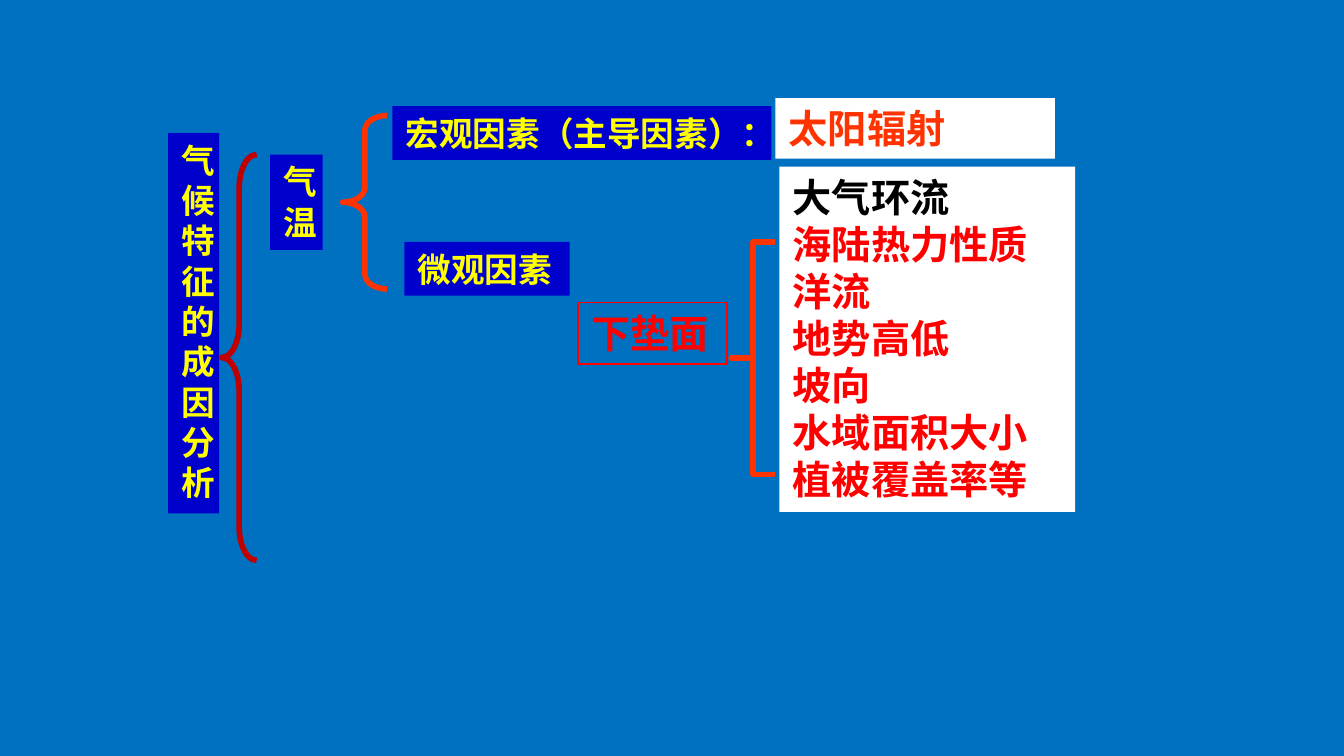
from dataclasses import dataclass
from typing import Optional

from pptx import Presentation
from pptx.dml.color import RGBColor
from pptx.enum.shapes import MSO_SHAPE
from pptx.enum.text import MSO_AUTO_SIZE
from pptx.util import Inches, Pt

LEFT_BRACE = MSO_SHAPE.LEFT_BRACE
FIT_TEXT = MSO_AUTO_SIZE.SHAPE_TO_FIT_TEXT


@dataclass(frozen=True)
class Theme:
    background: str = "0070C0"
    navy: str = "0000CC"
    yellow: str = "FFFF00"
    white: str = "FFFFFF"
    black: str = "000000"
    red: str = "FF0000"
    orange: str = "FF3300"
    dark_red: str = "C00000"
    topic_font: str = "Arial"
    topic_size: float = 18
    factor_font: str = "Times New Roman"
    factor_size: float = 21
    brace_width: float = 3
    frame_width: float = 0.75


THEME = Theme()


@dataclass(frozen=True)
class Area:
    left: float
    top: float
    width: float
    height: float

    def lengths(self) -> tuple:
        return tuple(map(Inches, (self.left, self.top, self.width, self.height)))


@dataclass(frozen=True)
class Line:
    text: str
    color: str


@dataclass(frozen=True)
class Label:
    area: Area
    lines: tuple[Line, ...]
    font: str
    size: float
    fill: Optional[str] = None
    frame: Optional[str] = None


@dataclass(frozen=True)
class Brace:
    area: Area
    curve: float
    color: str


def topic(area: Area, text: str) -> Label:
    return Label(area, (Line(text, THEME.yellow),), THEME.topic_font,
                 THEME.topic_size, fill=THEME.navy)


def factors(area: Area, *lines: Line, fill: Optional[str] = None,
            frame: Optional[str] = None) -> Label:
    return Label(area, lines, THEME.factor_font, THEME.factor_size, fill, frame)


SURFACE_FACTORS = ("海陆热力性质", "洋流", "地势高低", "坡向", "水域面积大小", "植被覆盖率等")

PARTS = (
    topic(Area(1.25, 0.99, 0.38, 2.83), "气候特征的成因分析"),
    Brace(Area(1.65, 1.15, 0.26, 3.02), 0.96, THEME.dark_red),
    topic(Area(2.01, 1.15, 0.39, 0.71), "气温"),
    Brace(Area(2.55, 0.86, 0.33, 1.29), 0.33, THEME.orange),
    topic(Area(2.92, 0.79, 2.82, 0.4), "宏观因素（主导因素）："),
    factors(Area(5.77, 0.73, 2.08, 0.45), Line("太阳辐射", THEME.orange),
            fill=THEME.white),
    topic(Area(3.01, 1.8, 1.23, 0.4), "微观因素"),
    factors(Area(4.3, 2.25, 1.11, 0.46), Line("下垫面", THEME.red),
            frame=THEME.red),
    factors(Area(5.8, 1.24, 2.2, 2.57), Line("大气环流", THEME.black),
            *(Line(name, THEME.red) for name in SURFACE_FACTORS),
            fill=THEME.white),
    Brace(Area(5.44, 1.8, 0.33, 1.73), 0, THEME.orange),
)


def rgb(color: str) -> RGBColor:
    return RGBColor.from_string(color)


def draw_label(page, label: Label) -> None:
    box = page.shapes.add_textbox(*label.area.lengths())
    if label.fill:
        box.fill.solid()
        box.fill.fore_color.rgb = rgb(label.fill)
    if label.frame:
        box.line.color.rgb = rgb(label.frame)
        box.line.width = Pt(THEME.frame_width)
    frame = box.text_frame
    frame.word_wrap = True
    frame.auto_size = FIT_TEXT
    frame.text = "\n".join(line.text for line in label.lines)
    for para, line in zip(frame.paragraphs, label.lines):
        para.font.name = label.font
        para.font.size = Pt(label.size)
        para.font.bold = True
        para.font.color.rgb = rgb(line.color)


def draw_brace(page, brace: Brace) -> None:
    shape = page.shapes.add_shape(LEFT_BRACE, *brace.area.lengths())
    shape.shadow.inherit = False
    shape.adjustments[0] = brace.curve
    shape.adjustments[1] = 0.5
    shape.fill.background()
    shape.line.color.rgb = rgb(brace.color)
    shape.line.width = Pt(THEME.brace_width)


def main() -> None:
    deck = Presentation()
    deck.slide_width = Inches(10)
    deck.slide_height = Inches(10 * 9 / 16)
    page = deck.slides.add_slide(deck.slide_layouts[6])
    page.background.fill.solid()
    page.background.fill.fore_color.rgb = rgb(THEME.background)
    for part in PARTS:
        if isinstance(part, Label):
            draw_label(page, part)
        else:
            draw_brace(page, part)
    deck.save("out.pptx")


if __name__ == "__main__":
    main()
